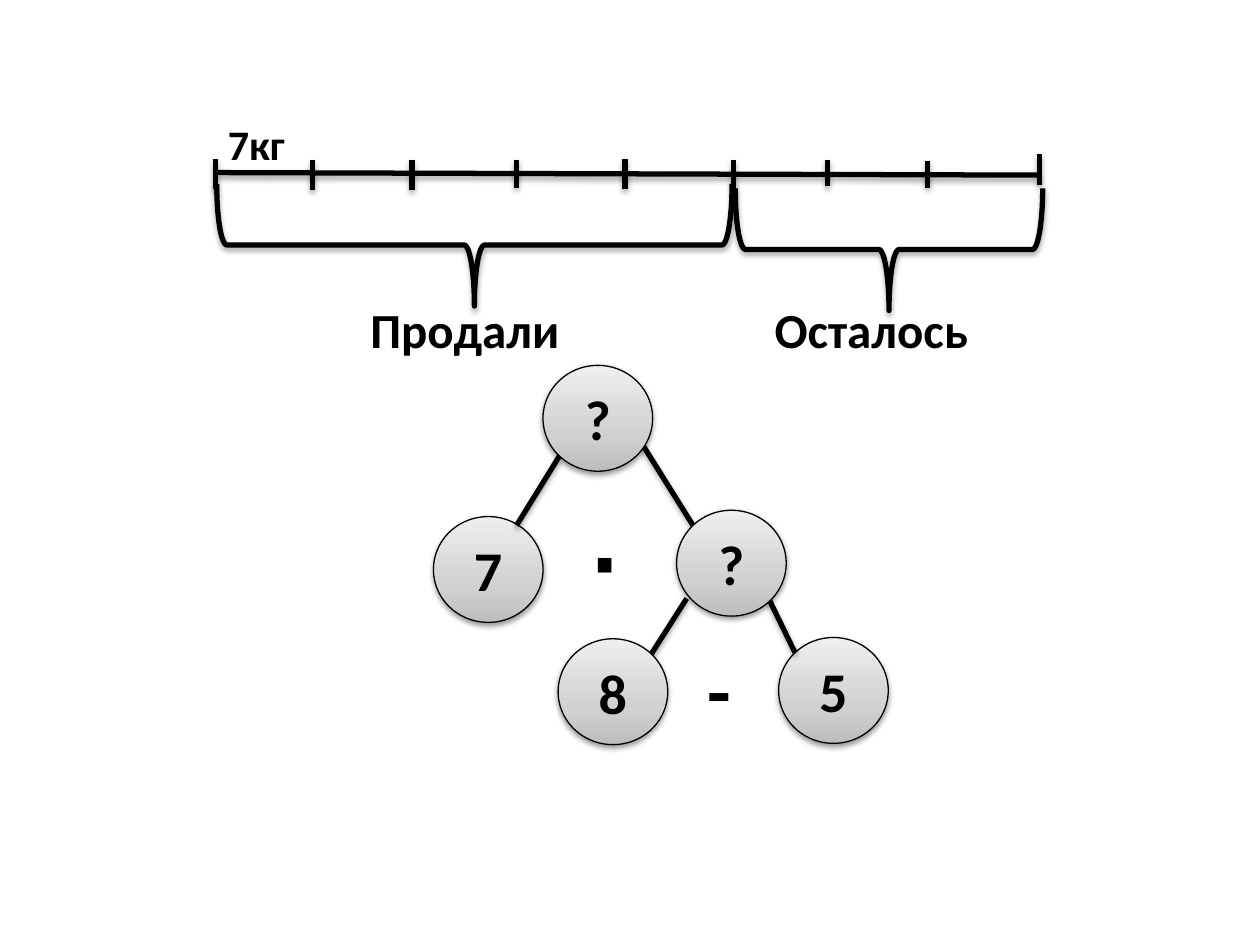
"""Segment diagram of sold and remaining kilograms with its solution tree."""
from copy import deepcopy
from pptx import Presentation
from pptx.dml.color import RGBColor
from pptx.enum.shapes import MSO_CONNECTOR as CONN, MSO_SHAPE as SHAPE
from pptx.enum.text import MSO_ANCHOR as ANCHOR, MSO_AUTO_SIZE as AUTO, PP_ALIGN as ALIGN
from pptx.oxml import parse_xml
from pptx.oxml.ns import nsdecls, qn
from pptx.util import Inches, Pt

COLORS = {"ink": "000000", "dark": "BDBDBD", "mid": "D1D1D1", "light": "EEEEEE"}
INK = RGBColor.from_string(COLORS["ink"])

prs = Presentation()
prs.slide_width, prs.slide_height = Inches(10), Inches(7.5)
COL, ROW = prs.slide_width / 100, prs.slide_height / 75
s = prs.slides.add_slide(prs.slide_layouts[6])


def outline(sp, width, opacity=35, dist=1.8):
    sp.line.color.rgb = INK
    sp.line.width = Pt(width)
    sp._element.spPr.append(parse_xml(
        f'<a:effectLst {nsdecls("a")}><a:outerShdw blurRad="{Pt(3.15)}" dist="{Pt(dist)}" '
        f'dir="5400000" rotWithShape="0"><a:srgbClr val="{COLORS["ink"]}">'
        f'<a:alpha val="{opacity * 1000}"/></a:srgbClr></a:outerShdw></a:effectLst>'))


def add_line(x1, y1, x2, y2):
    ends = (x1 * COL, y1 * ROW, x2 * COL, y2 * ROW)
    outline(s.shapes.add_connector(CONN.STRAIGHT, *(round(v) for v in ends)), 3)


add_line(54.5, 47.5, 51.7, 51.9)
add_line(51, 35.3, 55, 41.7)
add_line(17.1, 13.7, 82.5, 13.9)

ticks = [(17.1, 12.6, 15), (24.8, 12.7, 15.1), (32.7, 12.7, 15.1), (41, 12.7, 14.9),
         (49.6, 12.6, 15), (58.2, 12.7, 15.2), (65.7, 12.7, 14.8), (73.6, 12.8, 14.9),
         (82.5, 12.2, 14.7)]
for x, top, bottom in ticks:
    add_line(x, bottom, x, top)

for x, y, span in [(32.8, -1, 40.9), (65.7, 7.6, 24.4)]:
    brace = s.shapes.add_shape(SHAPE.RIGHT_BRACE, round(x * COL), round(y * ROW),
                               round(9.7 * COL), round(span * ROW))
    brace.rotation = 90
    brace.fill.background()
    outline(brace, 3)

NODE = (8.7, 8.4)
texts = [("Продали", 28, 28.4, 23.3, 18.5, 5.7), ("Осталось", 28, 60.5, 23.3, 20, 5.7),
         ("7кг", 24, 17.1, 8.9, 8.4, 5),
         ("?", 32, 43.1, 29, *NODE), ("7", 32, 34.4, 41, *NODE), ("?", 32, 53.7, 40.5, *NODE),
         ("8", 32, 44.3, 50.7, *NODE), ("5", 32, 61.8, 50.6, *NODE),
         ("∙", 44, 45.9, 40.4, 3.7, 8.4), ("-", 44, 55.2, 50.5, 5.8, 8.4)]
for text, size, x, y, w, h in texts:
    box = (round(x * COL), round(y * ROW), round(w * COL), round(h * ROW))
    is_node = (w, h) == NODE
    sp = s.shapes.add_shape(SHAPE.OVAL, *box) if is_node else s.shapes.add_textbox(*box)
    tf = sp.text_frame
    p = tf.paragraphs[0]
    tf.word_wrap = text != "∙"
    if is_node:
        sp.fill.gradient()
        sp.fill.gradient_angle = 90
        first = next(sp._element.spPr.iter(qn("a:gs")))
        first.addnext(deepcopy(first))
        for stop, name, position in zip(sp.fill.gradient_stops, ("dark", "mid", "light"), (0, 0.35, 1)):
            stop.color.rgb = RGBColor.from_string(COLORS[name])
            stop.position = position
        outline(sp, 0.75, 38, 1.6)
        tf.vertical_anchor = ANCHOR.MIDDLE
        p.alignment = ALIGN.CENTER
    else:
        tf.auto_size = AUTO.SHAPE_TO_FIT_TEXT
    r = p.add_run()
    r.text = text
    r.font.name, r.font.size, r.font.bold = "Calibri", Pt(size), True
    r.font.color.rgb = INK

add_line(44.4, 36.2, 41, 41.7)
add_line(61.1, 47.7, 63.1, 51.8)

prs.save("out.pptx")
